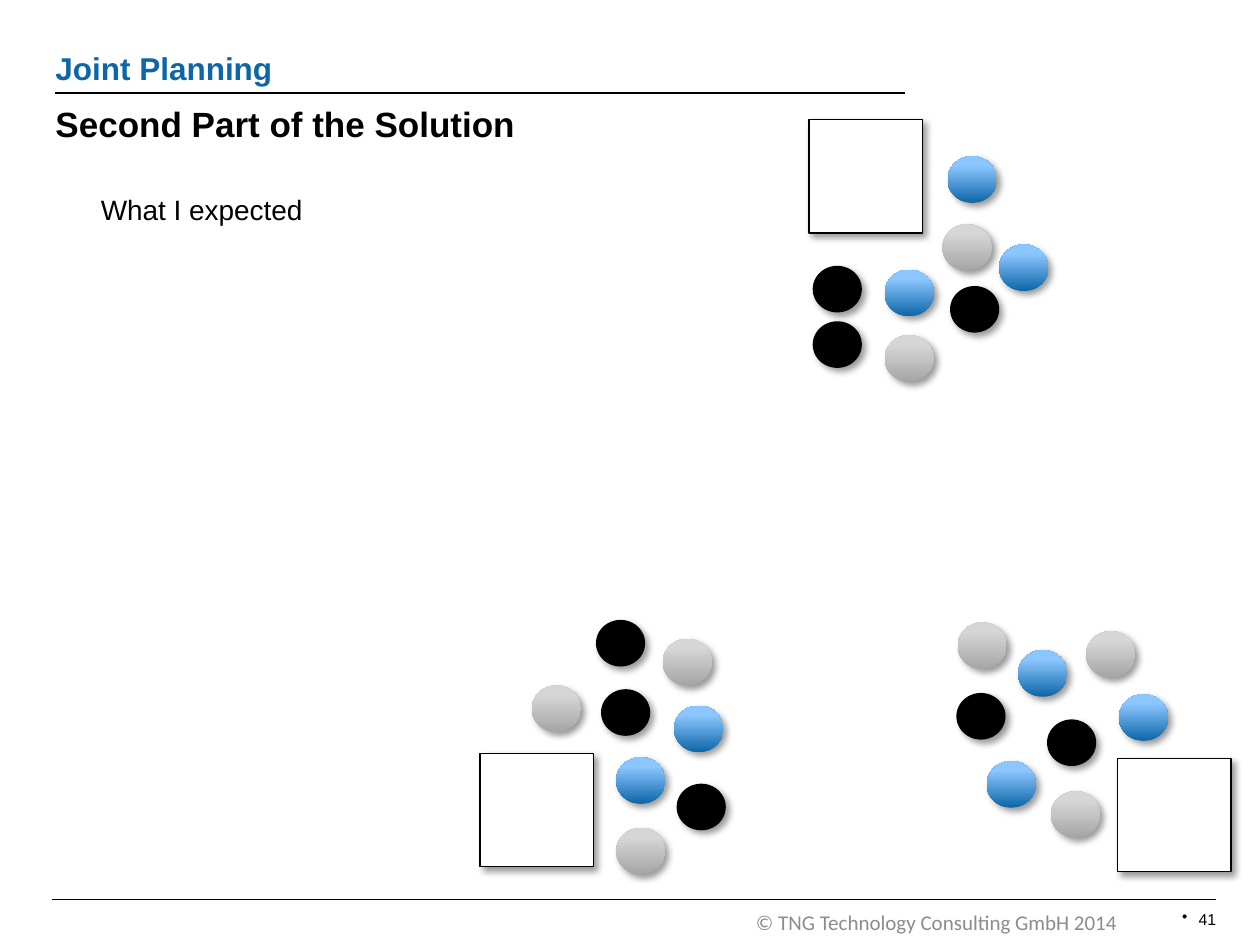
from lxml import etree
from pptx import Presentation
from pptx import util as u
from pptx.dml.color import RGBColor
from pptx.enum import shapes, text
from pptx.oxml import parse_xml
from pptx.oxml.ns import qn

Inches = u.Inches
NS = 'xmlns:a="http://schemas.openxmlformats.org/drawingml/2006/main"'
HUE = {"ink": "000000", "paper": "FFFFFF", "head": "0D66A7", "foot": "8C8C8C",
       "blue": "0D66A7", "sky": "8CC6FF", "grey": "A5A5A5", "mist": "D6D6D6"}
HUE = {key: RGBColor.from_string(val) for key, val in HUE.items()}
SHADOW = (f'<a:outerShdw {NS} blurRad="{u.Pt(4)}" dist="{u.Pt(3)}" dir="2700000" '
          'algn="tl" rotWithShape="0"><a:srgbClr val="000000">'
          '<a:alpha val="40000"/></a:srgbClr></a:outerShdw>')

prs = Presentation()
prs.slide_width, prs.slide_height = Inches(10), Inches(7.5)
slide = prs.slides.add_slide(prs.slide_layouts[5])


def write(box, at, words, size, hue, bold=False, font="Arial", pad=0):
    box.left, box.top, box.width, box.height = map(Inches, at)
    frame = box.text_frame
    frame.word_wrap = True
    frame.auto_size = text.MSO_AUTO_SIZE.NONE
    frame.vertical_anchor = text.MSO_ANCHOR.TOP
    frame.margin_left = 0
    frame.margin_right = Inches(pad)
    frame.margin_top = frame.margin_bottom = Inches(pad / 2)
    frame.text = words
    para = frame.paragraphs[0]
    para.alignment = text.PP_ALIGN.LEFT
    para.font.size, para.font.bold, para.font.name = u.Pt(size), bold, font
    para.font.color.rgb = HUE[hue]
    return para


def place(kind, x, y, w, h):
    """Add a shape with a soft shadow to the lower right."""
    item = slide.shapes.add_shape(kind, *map(Inches, (x, y, w, h)))
    item.shadow.inherit = False
    item._element.spPr.find(qn("a:effectLst")).append(parse_xml(SHADOW))
    return item


# Rules above and below the content
for x1, x2, y in [(0.41, 9.65, 7.14), (0.44, 7.18, 0.74)]:
    rule = slide.shapes.add_connector(
        shapes.MSO_CONNECTOR.STRAIGHT, *map(Inches, (x1, y, x2, y)))
    rule.line.color.rgb = HUE["ink"]
    rule.line.width = u.Pt(1)
    etree.SubElement(rule._element.spPr, qn("a:effectLst"))

# Text
write(slide.shapes.title, (0.44, 0.81, 6.77, 0.34),
      "Second Part of the Solution", 20, "ink", True)
new = slide.shapes.add_textbox
write(new(0, 0, 0, 0), (0.44, 0.39, 6.69, 0.3), "Joint Planning", 18, "head", True)
body = write(new(0, 0, 0, 0), (0.41, 1.53, 9.23, 0.27), "What I expected", 16, "ink")
body._p.get_or_add_pPr().set("marL", str(Inches(0.39)))
write(new(0, 0, 0, 0), (6, 7.22, 3.26, 0.2),
      "© TNG Technology Consulting GmbH 2014", 12, "foot", font="Calibri")
page = write(new(0, 0, 0, 0), (9.28, 7.17, 0.47, 0.25), "41", 9, "ink", pad=0.1)
page.alignment = text.PP_ALIGN.RIGHT
props = page._p.get_or_add_pPr()
props.set("marL", str(Inches(0.13)))
props.set("indent", str(-Inches(0.13)))
props.insert(0, parse_xml(f'<a:buChar {NS} char="•"/>'))

# Three squares, each with a loose group of balls
for x, y in [(6.42, 0.95), (3.81, 5.98), (8.87, 6.02)]:
    square = place(shapes.MSO_SHAPE.RECTANGLE, x, y, 0.9, 0.9)
    square.fill.solid()
    square.fill.fore_color.rgb = HUE["paper"]
    square.line.color.rgb = HUE["ink"]
    square.line.width = u.Pt(0.75)

balls = {
    ("grey", "mist"): [(7.48, 1.78), (7.02, 2.66), (7.6, 4.94), (8.34, 6.28),
                       (4.89, 6.57), (4.22, 5.44), (8.62, 5.01), (5.26, 5.07)],
    ("ink", "ink"): [(6.45, 2.11), (4.73, 4.92), (4.77, 5.47), (5.37, 6.22),
                     (8.31, 5.71), (7.59, 5.5), (6.45, 2.55), (7.54, 2.27)],
    ("blue", "sky"): [(7.93, 1.94), (7.52, 1.24), (7.02, 2.14), (8.88, 5.51),
                      (8.08, 5.16), (4.89, 6.01), (5.35, 5.6), (7.83, 6.04)],
}
for (low, high), spots in balls.items():
    for x, y in spots:
        ball = place(shapes.MSO_SHAPE.OVAL, x, y, 0.39, 0.37)
        ball.line.fill.background()
        if low == high:
            ball.fill.solid()
            ball.fill.fore_color.rgb = HUE[low]
            continue
        ball.fill.gradient()
        ball.fill.gradient_angle = 90
        for stop, hue, spot in zip(ball.fill.gradient_stops, (low, high), (0, 0.8)):
            stop.color.rgb = HUE[hue]
            stop.position = spot

prs.save("out.pptx")
